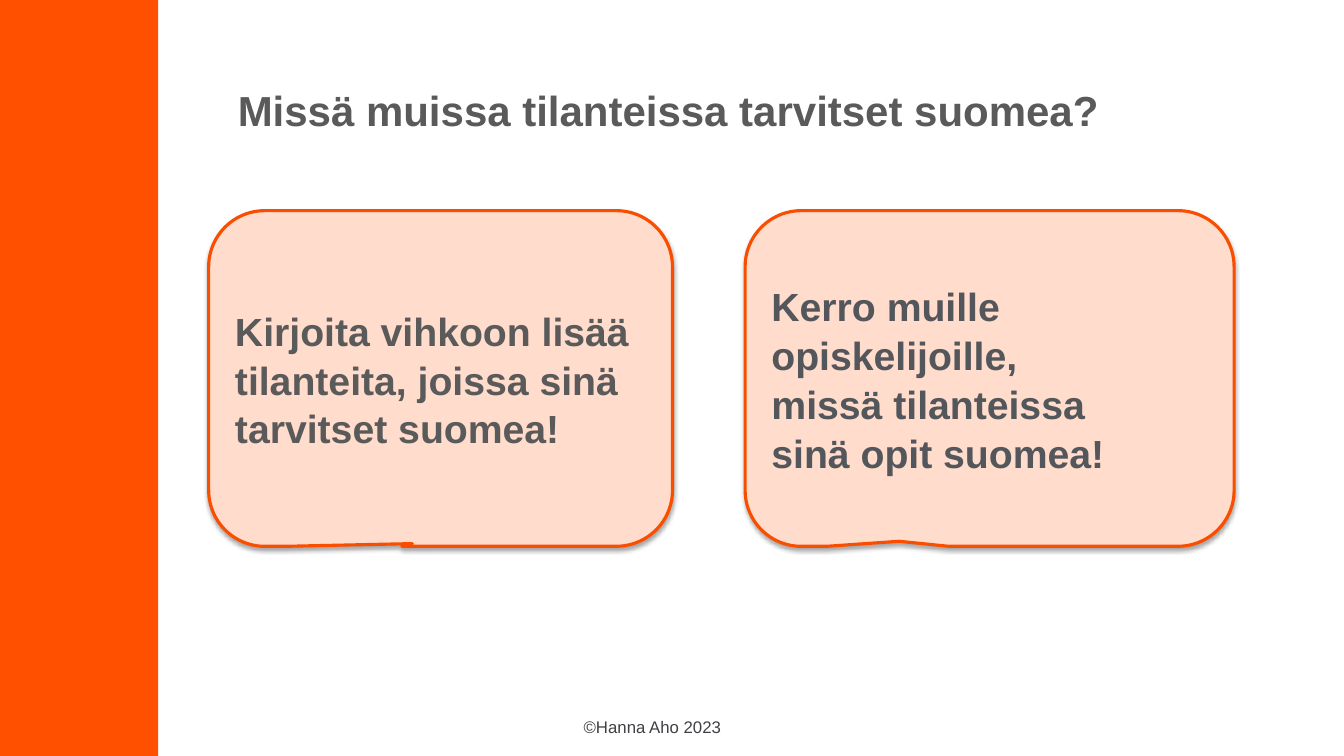
from lxml import etree
from pptx import Presentation
from pptx.dml.color import RGBColor
from pptx.enum.shapes import MSO_SHAPE as Shape
from pptx.enum.text import MSO_ANCHOR as Anchor, PP_ALIGN as Align
from pptx.oxml.ns import qn
from pptx.util import Inches, Pt

WIDE, HIGH = 13.33, 7.5
ORANGE, EDGE, PEACH = "FF5000", "F94E00", "FFDCCC"
GREY, SLATE, DARK = "5A5A5A", "53565A", "3E4043"


def color(code):
    return RGBColor.from_string(code)


def write(frame, lines, size, code, bold=False, anchor=Anchor.TOP, pitch=1):
    frame.word_wrap = True
    frame.vertical_anchor = anchor
    para = frame.paragraphs[0]
    para.alignment = Align.LEFT
    para.line_spacing = pitch
    for i, line in enumerate(lines):
        if i:
            para.add_line_break()
        run = para.add_run()
        run.text = line
        font = run.font
        font.name, font.size, font.bold = "Arial", Pt(size), bold
        font.color.rgb = color(code)


def label(slide, box, text, size, code, **style):
    area = slide.shapes.add_textbox(*map(Inches, box))
    write(area.text_frame, [text], size, code, **style)


def panel(slide, kind, box, fill):
    shape = slide.shapes.add_shape(kind, *map(Inches, box))
    shape.shadow.inherit = False
    shape.fill.solid()
    shape.fill.fore_color.rgb = color(fill)
    shape.line.fill.background()
    return shape


def shade(shape):
    """Soft shadow straight below the shape."""
    effects = shape.element.spPr.find(qn("a:effectLst"))
    outer = etree.SubElement(effects, qn("a:outerShdw"), blurRad=str(Pt(3.1)),
                             dist=str(Pt(1.8)), dir="5400000", rotWithShape="0")
    black = etree.SubElement(outer, qn("a:srgbClr"), val="000000")
    etree.SubElement(black, qn("a:alpha"), val="35000")


def bubble(slide, box, tip, lines, code):
    shape = panel(slide, Shape.ROUNDED_RECTANGULAR_CALLOUT, box, PEACH)
    for i, value in enumerate((*tip, 0.167)):
        shape.adjustments[i] = value
    shape.line.color.rgb = color(EDGE)
    shape.line.width = Pt(2.25)
    shade(shape)
    write(shape.text_frame, lines, 28, code, bold=True,
          anchor=Anchor.MIDDLE, pitch=1.04)


def build():
    deck = Presentation()
    deck.slide_width, deck.slide_height = Inches(WIDE), Inches(HIGH)
    slide = deck.slides.add_slide(deck.slide_layouts[6])

    # Side band and title
    panel(slide, Shape.RECTANGLE, (0, 0, 1.57, HIGH), ORANGE)
    label(slide, (2.26, 0.59, 10.68, 0.8),
          "Missä muissa tilanteissa tarvitset suomea?", 30, GREY,
          bold=True, anchor=Anchor.BOTTOM)

    # Two speech bubbles in one row
    top, tall = 2.09, 3.33
    bubble(slide, (2.07, top, 4.6, tall), (-0.061, 0.492),
           ["Kirjoita vihkoon lisää tilanteita, joissa sinä tarvitset suomea!"],
           GREY)
    bubble(slide, (7.39, top, 4.85, tall), (-0.185, 0.485),
           ["Kerro muille opiskelijoille,", "missä tilanteissa",
            "sinä opit suomea!"], SLATE)

    # Footer
    label(slide, (5.69, 7.06, 1.95, 0.3), "©Hanna Aho 2023", 12, DARK)
    deck.save("out.pptx")


if __name__ == "__main__":
    build()
